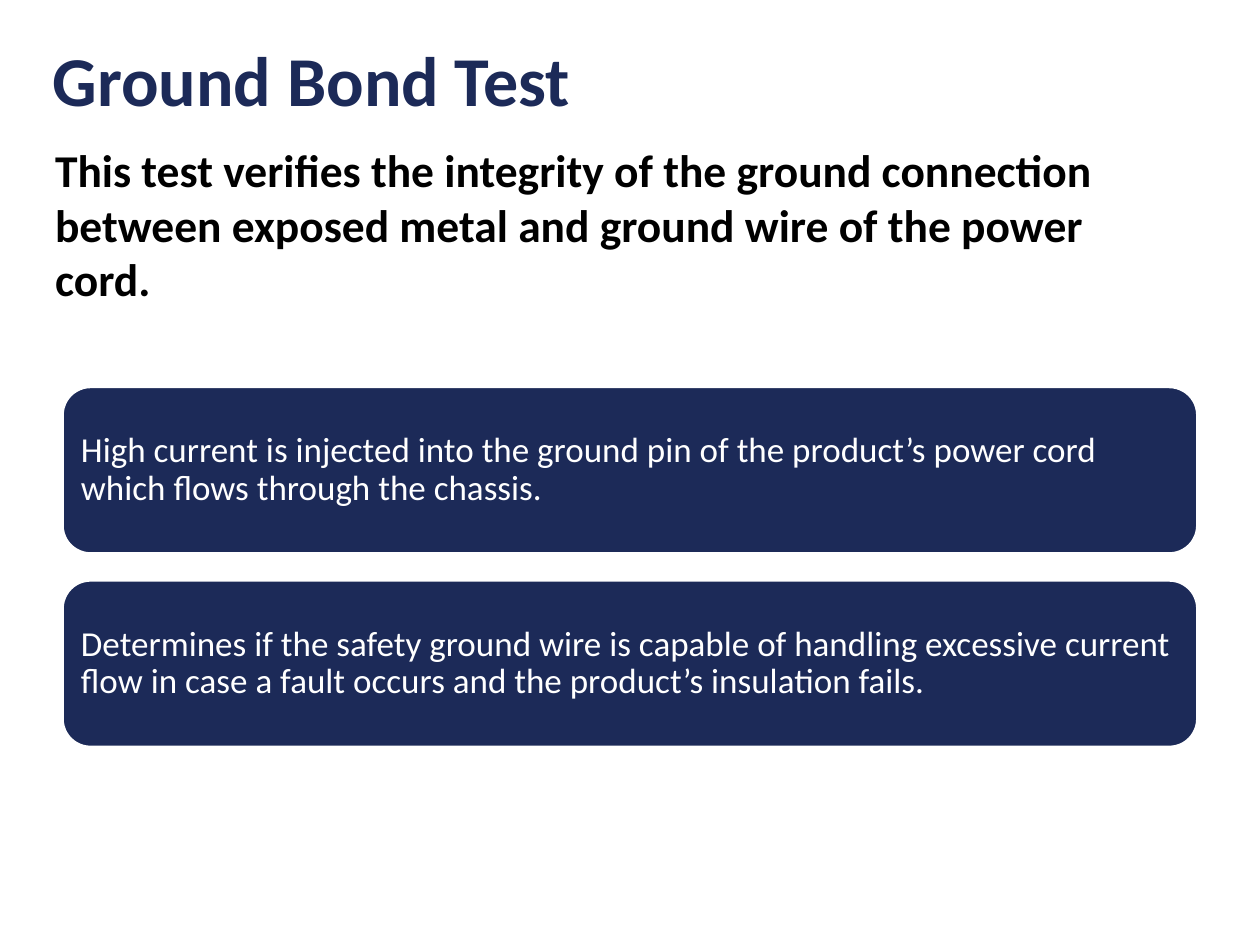
from pptx import Presentation
from pptx.dml.color import RGBColor
from pptx.enum.shapes import MSO_SHAPE
from pptx.enum.text import MSO_ANCHOR, PP_ALIGN
from pptx.util import Cm, Pt

NAVY = RGBColor(0x1C, 0x2A, 0x58)
WHITE = RGBColor(0xFF, 0xFF, 0xFF)
BLACK = RGBColor(0x00, 0x00, 0x00)
ROUNDED = MSO_SHAPE.ROUNDED_RECTANGLE
TOP, MIDDLE = MSO_ANCHOR.TOP, MSO_ANCHOR.MIDDLE
LEFT = PP_ALIGN.LEFT
TITLE_ONLY = 5

CARD_TOP, CARD_HEIGHT, CARD_GAP = 7.81, 3.34, 0.56
CARD_TEXTS = [
    "High current is injected into the ground pin of the product’s power cord "
    "which flows through the chassis.",
    "Determines if the safety ground wire is capable of handling excessive "
    "current flow in case a fault occurs and the product’s insulation fails.",
]


class SlideBuilder:
    font_name = "Calibri"

    def __init__(self, slide):
        self.slide = slide

    def set_text(self, shape, text, size, color, bold=False, spacing=1.0, anchor=TOP):
        frame = shape.text_frame
        frame.text = text
        frame.word_wrap = True
        frame.vertical_anchor = anchor
        para = frame.paragraphs[0]
        para.alignment = LEFT
        para.line_spacing = spacing
        font = para.runs[0].font
        font.name = self.font_name
        font.size = Pt(size)
        font.bold = bold
        font.color.rgb = color

    def title(self, text):
        title = self.slide.shapes.title
        title.left, title.top = Cm(0.81), Cm(0.81)
        title.width, title.height = Cm(22.86), Cm(3.48)
        self.set_text(title, text, 40, NAVY, bold=True, spacing=0.9)

    def statement(self, text):
        box = self.slide.shapes.add_textbox(Cm(0.86), Cm(2.74), Cm(22.43), Cm(3.58))
        self.set_text(box, text, 26, BLACK, bold=True)

    def card(self, text, top):
        card = self.slide.shapes.add_shape(
            ROUNDED, Cm(1.27), Cm(top), Cm(22.86), Cm(CARD_HEIGHT))
        card.shadow.inherit = False
        card.fill.solid()
        card.fill.fore_color.rgb = NAVY
        card.line.color.rgb = WHITE
        card.line.width = Pt(1)
        # The rounded corners add their own inset to these margins.
        frame = card.text_frame
        frame.margin_left = frame.margin_right = Cm(0.2)
        frame.margin_top = frame.margin_bottom = Cm(0.2)
        self.set_text(card, text, 20, WHITE, spacing=0.9, anchor=MIDDLE)


def main():
    deck = Presentation()
    deck.slide_width, deck.slide_height = Cm(25.4), Cm(19.05)
    page = SlideBuilder(deck.slides.add_slide(deck.slide_layouts[TITLE_ONLY]))
    page.title("Ground Bond Test")
    page.statement(
        "This test verifies the integrity of the ground connection between "
        "exposed metal and ground wire of the power cord.")
    for index, text in enumerate(CARD_TEXTS):
        page.card(text, CARD_TOP + index * (CARD_HEIGHT + CARD_GAP))
    deck.save("out.pptx")


if __name__ == "__main__":
    main()
